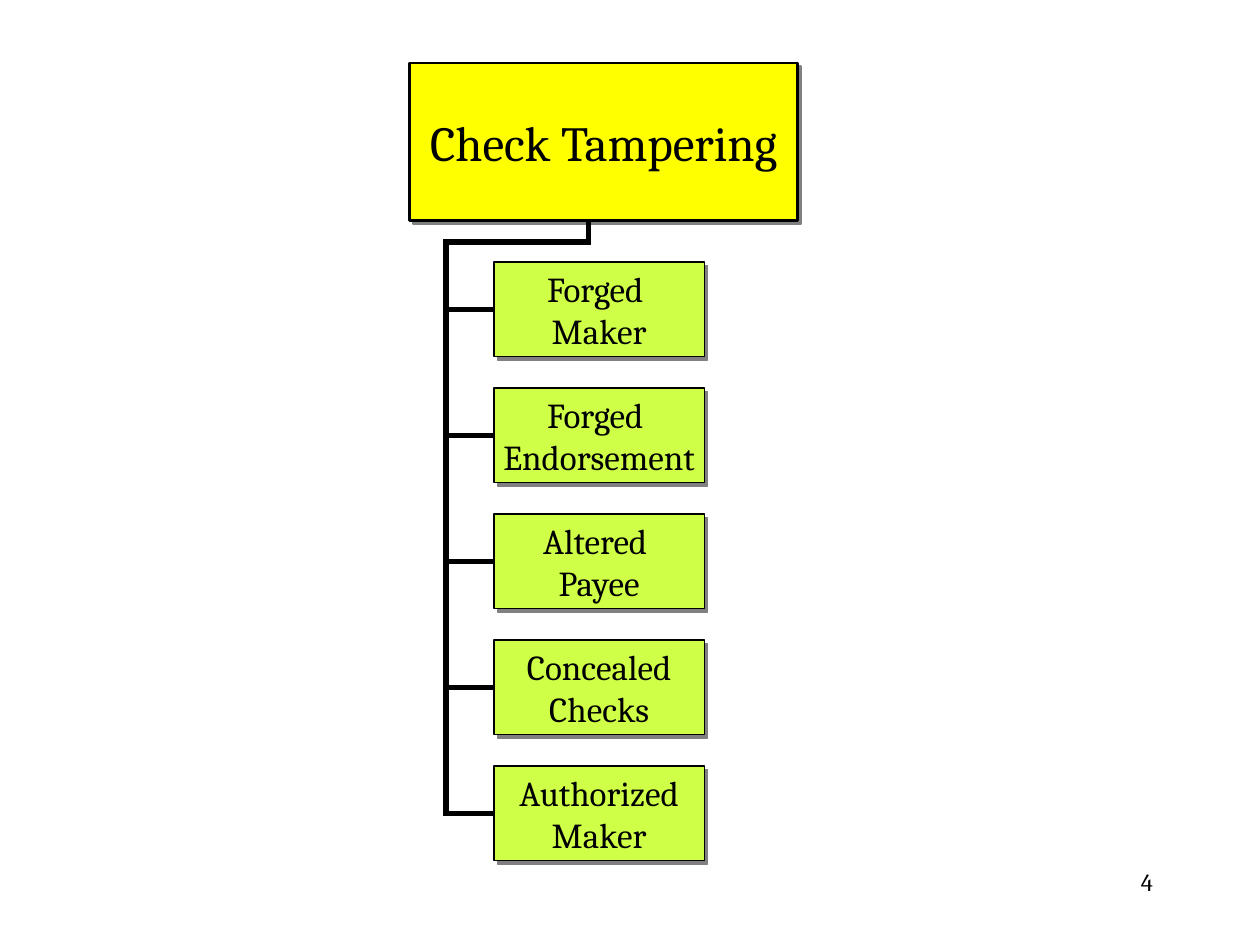
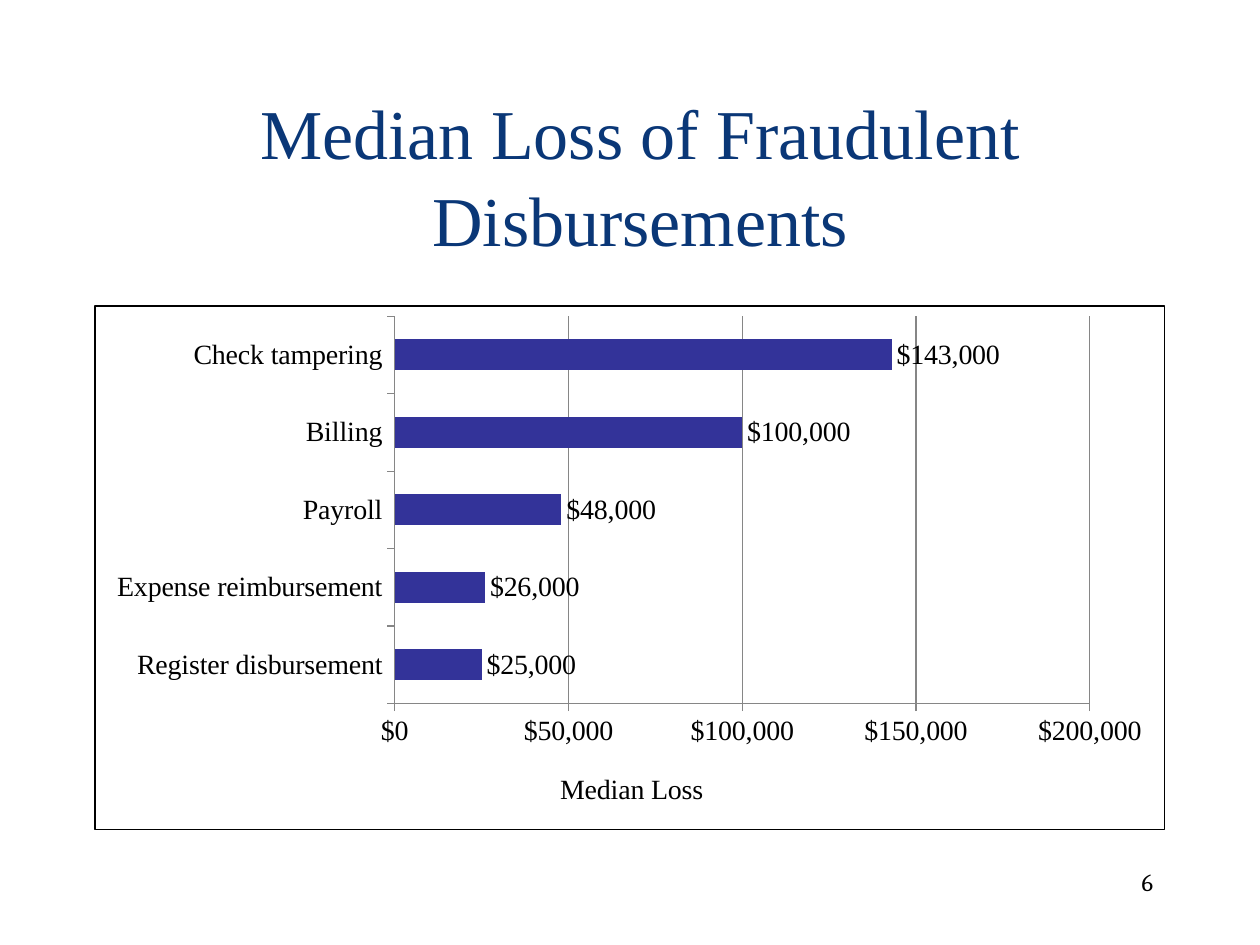
from pptx import Presentation
from pptx.chart.data import CategoryChartData as ChartData
from pptx.dml.color import RGBColor
from pptx.enum.chart import XL_CHART_TYPE as Kind, XL_LABEL_POSITION as Spot
from pptx.enum.chart import XL_TICK_MARK as Tick
from pptx.enum.shapes import MSO_CONNECTOR as Wire, MSO_SHAPE as Form
from pptx.enum.text import MSO_ANCHOR as Anchor, MSO_AUTO_SIZE as Fit, PP_ALIGN as Align
from pptx.oxml import parse_xml
from pptx.oxml.ns import nsdecls, qn
from pptx.util import Inches, Pt

# Shared look
BLACK, GREY, NAVY = "000000", "868686", "0A3777"
YELLOW, LIME, INDIGO, SHADE = "FFFF00", "CFFF47", "333399", "808080"
SERIF, ROMAN = "Cambria", "Times New Roman"
MONEY = '"$"#,##0'
LEFT, MID, BOTTOM = 1, 0.5, 2

# Organization chart measures
TRUNK, BAR_Y, STEM_X = 3.54, 1.92, 4.67
ROOT = (3.25, 0.5, 3.08, 1.25)
LEAF_X, LEAF_Y, LEAF_W, LEAF_H, STEP = 3.92, 2.08, 1.67, 0.75, 1
SCHEMES = ["Forged \nMaker", "Forged \nEndorsement", "Altered \nPayee",
           "Concealed\nChecks", "Authorized\nMaker"]

LOSSES = {"Register disbursement": 25000, "Expense reimbursement": 26000,
          "Payroll": 48000, "Billing": 100000, "Check tampering": 143000}


def color(code):
    return RGBColor.from_string(code)


def style(font, size, face=SERIF, ink=BLACK):
    font.size, font.name, font.bold = Pt(size), face, False
    font.color.rgb = color(ink)


def write(frame, text, size, face=SERIF, ink=BLACK, align=Align.CENTER,
          anchor=Anchor.MIDDLE, wrap=True, spacing=None):
    frame.word_wrap, frame.auto_size = wrap, Fit.NONE
    frame.vertical_anchor = anchor
    for i, line in enumerate(text.split("\n")):
        para = frame.add_paragraph() if i else frame.paragraphs[0]
        para.alignment, para.line_spacing = align, spacing
        run = para.add_run()
        run.text = line
        style(run.font, size, face, ink)


def number(slide, text):
    box = slide.shapes.add_textbox(*map(Inches, (7.17, 6.83, 2.08, 0.5)))
    write(box.text_frame, text, 14, align=Align.RIGHT, anchor=Anchor.TOP)


def effects(shape, inner=""):
    shape.element.spPr.append(parse_xml(
        f'<a:effectLst {nsdecls("a")}>{inner}</a:effectLst>'))


def card(slide, place, text, size, fill, edge):
    box = slide.shapes.add_shape(Form.RECTANGLE, *map(Inches, place))
    box.fill.solid()
    box.fill.fore_color.rgb = color(fill)
    box.line.color.rgb, box.line.width = color(BLACK), Pt(edge)
    effects(box, f'<a:outerShdw dist="{Pt(2.8)}" dir="2700000" algn="ctr" '
                 f'rotWithShape="0"><a:srgbClr val="{SHADE}"/></a:outerShdw>')
    write(box.text_frame, text, size, wrap=False)
    return box


def link(slide, *ends):
    line = slide.shapes.add_connector(Wire.STRAIGHT, *map(Inches, ends))
    line.line.color.rgb, line.line.width = color(BLACK), Pt(3)
    effects(line)
    return line


def arrange(node, index, inner="", **fracs):
    """Fix the layout of a chart part, as fractions of the chart."""
    for old in node.findall(qn("c:layout")):
        node.remove(old)
    sizes = "".join(f'<c:{k} val="{v}"/>' for k, v in fracs.items())
    node.insert(index, parse_xml(
        f'<c:layout {nsdecls("c")}><c:manualLayout>{inner}<c:xMode val="edge"/>'
        f'<c:yMode val="edge"/>{sizes}</c:manualLayout></c:layout>'))


def tree(slide):
    # Boxes
    card(slide, ROOT, "Check Tampering", 28, YELLOW, 1.5)
    tops = [LEAF_Y + i * STEP for i in range(len(SCHEMES))]
    leaves = [card(slide, (LEAF_X, top, LEAF_W, LEAF_H), text, 20, LIME, 0.75)
              for top, text in zip(tops, SCHEMES)]
    # Stem, crossbar and trunk
    half = 0.02
    mids = [top + LEAF_H / 2 for top in tops]
    link(slide, TRUNK, BAR_Y - half, TRUNK, mids[-1] + half)
    link(slide, STEM_X, ROOT[1] + ROOT[3], STEM_X, BAR_Y)
    link(slide, TRUNK - half, BAR_Y, STEM_X + half, BAR_Y)
    # Branches
    for leaf, mid in zip(leaves, mids):
        link(slide, TRUNK, mid, LEAF_X, mid).end_connect(leaf, LEFT)


def heading(slide, text):
    title = slide.shapes.title
    title.left, title.top, title.width, title.height = map(
        Inches, (0.83, 0.75, 8.5, 1.25))
    write(title.text_frame, text, 40, face=ROMAN, ink=NAVY, spacing=1.04)


def pen(line, ink=GREY, width=0.75):
    line.color.rgb, line.width = color(ink), Pt(width)


def bars(slide):
    data = ChartData(number_format=MONEY)
    data.categories = list(LOSSES)
    data.add_series("Series 1", list(LOSSES.values()))
    chart = slide.shapes.add_chart(
        Kind.BAR_CLUSTERED, *map(Inches, (0.75, 2.42, 8.5, 4.17)), data).chart
    chart.has_legend = chart.has_title = False
    style(chart.font, 16, ROMAN)

    # Bars and their labels
    plot = chart.plots[0]
    plot.gap_width, plot.vary_by_categories = 150, False
    fill = plot.series[0].format.fill
    fill.solid()
    fill.fore_color.rgb = color(INDIGO)
    plot.has_data_labels = True
    labels = plot.data_labels
    labels.show_value, labels.position = True, Spot.OUTSIDE_END
    labels.number_format, labels.number_format_is_linked = MONEY, False
    style(labels.font, 16, ROMAN)

    # Axes
    cats, vals = chart.category_axis, chart.value_axis
    for axis in (cats, vals):
        axis.major_tick_mark, axis.minor_tick_mark = Tick.OUTSIDE, Tick.NONE
        pen(axis.format.line)
        style(axis.tick_labels.font, 16, ROMAN)
    vals.minimum_scale, vals.maximum_scale, vals.major_unit = 0, 200000, 50000
    vals.has_major_gridlines = True
    pen(vals.major_gridlines.format.line)
    vals.tick_labels.number_format = MONEY
    vals.tick_labels.number_format_is_linked = False
    name = vals.axis_title
    write_name = name.text_frame.paragraphs[0].add_run()
    write_name.text = "Median Loss"
    style(write_name.font, 16, ROMAN)

    # Layout and frame
    arrange(name.element if hasattr(name, "element") else vals.axis_title._element,
            1, x=0.43, y=0.88)
    root = chart.element
    body = root.find(qn("c:chart"))
    arrange(body.find(qn("c:plotArea")), 0, '<c:layoutTarget val="inner"/>',
            x=0.28, y=0.02, w=0.65, h=0.74)
    body.addnext(parse_xml(
        f'<c:spPr {nsdecls("c", "a")}><a:noFill/><a:ln w="{Pt(1)}"><a:solidFill>'
        f'<a:srgbClr val="{BLACK}"/></a:solidFill></a:ln></c:spPr>'))


def main():
    deck = Presentation()
    deck.slide_width, deck.slide_height = Inches(10), Inches(7.5)
    only, blank = deck.slide_layouts[5], deck.slide_layouts[6]

    # Kinds of check tampering
    slide = deck.slides.add_slide(blank)
    number(slide, "4")
    tree(slide)

    # Median losses
    slide = deck.slides.add_slide(only)
    number(slide, "6")
    heading(slide, "Median Loss of Fraudulent Disbursements")
    bars(slide)

    deck.save("out.pptx")


if __name__ == "__main__":
    main()
